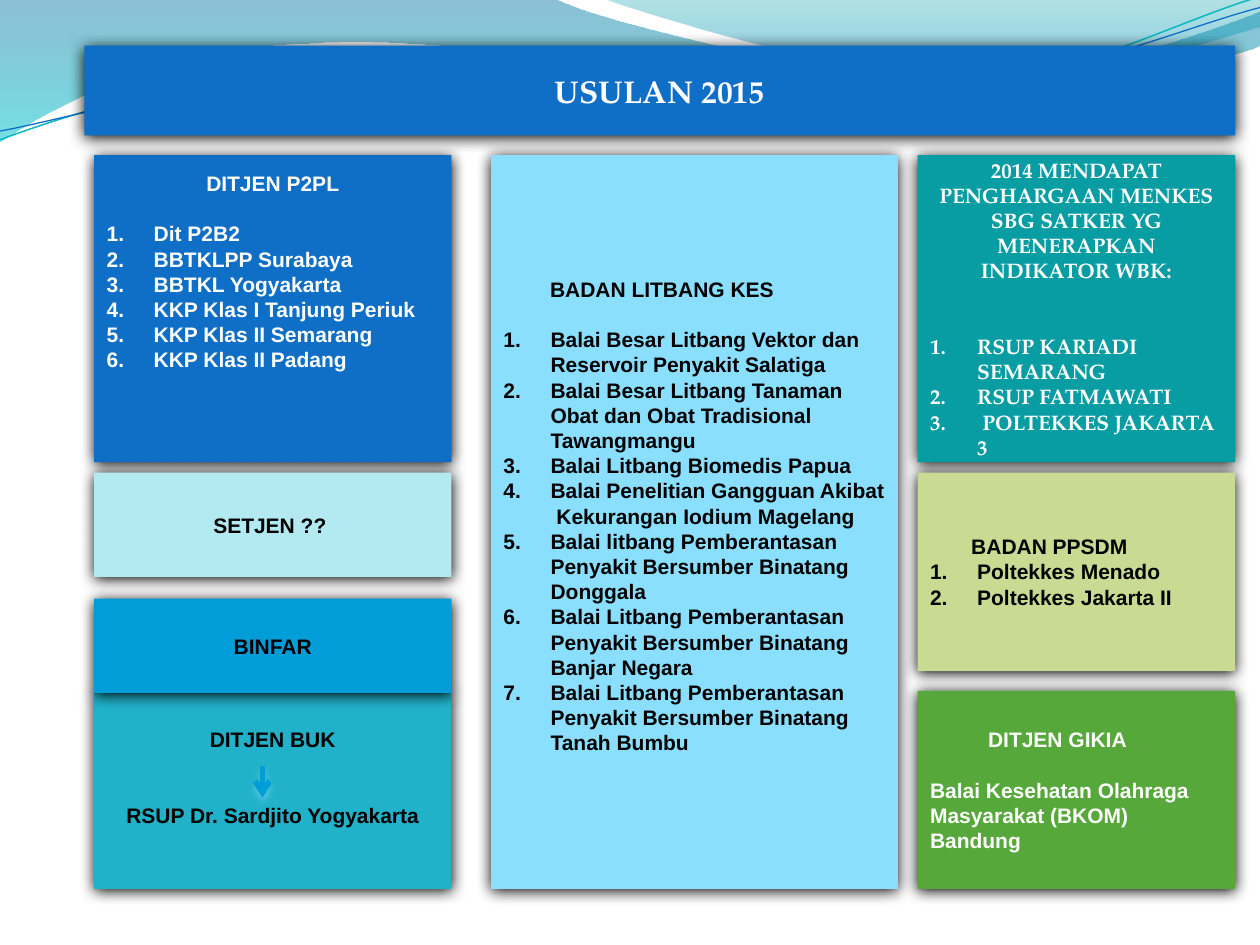
from itertools import chain

from pptx import Presentation
from pptx.dml.color import RGBColor
from pptx.enum.shapes import MSO_CONNECTOR as Connector, MSO_SHAPE as Shape
from pptx.enum.text import MSO_ANCHOR as Anchor, PP_ALIGN as Align
from pptx.oxml import parse_xml
from pptx.oxml.ns import nsdecls, qn
from pptx.util import Cm, Pt

WHITE = RGBColor(0xFF, 0xFF, 0xFF)
BLACK = RGBColor(0x00, 0x00, 0x00)
BLUE = RGBColor(0x0F, 0x6F, 0xC6)
SKY = RGBColor(0x8A, 0xDF, 0xFF)
TEAL = RGBColor(0x08, 0x9C, 0xA3)
GREEN = RGBColor(0x55, 0xA8, 0x39)
LIME = RGBColor(0xC9, 0xDA, 0x92)
TURQUOISE = RGBColor(0x21, 0xB2, 0xC9)
PALE = RGBColor(0xB3, 0xEA, 0xF2)
CYAN = RGBColor(0x00, 0x9D, 0xD9)
AQUA = RGBColor(0x0A, 0xB8, 0xBF)
WAVE_BLUE = RGBColor(0x00, 0x74, 0xA1)
WAVE_CYAN = RGBColor(0x00, 0xC6, 0xCF)
WAVE_TEAL = RGBColor(0x00, 0xA1, 0xA9)
WAVE_DEEP = RGBColor(0x00, 0x8B, 0xBF)

SERIF, SANS = "TeX Gyre Pagella", "Arial"
INCH = 2.54
HANGING = Cm(0.95)
LINE = 14.4  # line pitch of the body text, in points


class SlideBuilder:
    def __init__(self, slide):
        self.slide = slide

    def shadow(self, element, color=BLACK, opacity=100, blur=8.5, distance=1):
        properties = element.spPr
        for old in properties.findall(qn("a:effectLst")):
            properties.remove(old)
        properties.append(parse_xml(
            f'<a:effectLst {nsdecls("a")}><a:outerShdw blurRad="{Pt(blur)}" dist="{Pt(distance)}" '
            f'dir="5400000" rotWithShape="0"><a:srgbClr val="{color}">'
            f'<a:alpha val="{opacity * 1000}"/></a:srgbClr></a:outerShdw></a:effectLst>'))

    def outline(self, start, segments, close):
        """Freeform of segments: one point is a line, three points are a Bezier curve."""
        (x, y), *rest = [(Cm(x * INCH), Cm(y * INCH)) for x, y in chain([start], *segments)]
        builder = self.slide.shapes.build_freeform(x, y)
        builder.add_line_segments(rest, close=close)
        shape = builder.convert_to_shape()
        shape.shadow.inherit = False
        lines = iter(list(shape._element.iter(qn("a:lnTo"))))
        for segment in segments:
            first, *others = [next(lines) for _ in segment]
            if others:
                bezier = parse_xml(f'<a:cubicBezTo {nsdecls("a")}/>')
                first.addprevious(bezier)
                for line in (first, *others):
                    bezier.append(line[0])
                    line.getparent().remove(line)
        return shape

    def wave(self, start, segments, stops):
        shape = self.outline(start, segments, True)
        shape.line.fill.background()
        shape.fill.gradient()
        shape.fill.gradient_angle = 270
        for stop, (position, color, _) in zip(shape.fill.gradient_stops, stops):
            stop.position = position
            stop.color.rgb = color
        for element, (_, _, opacity) in zip(shape._element.spPr.iter(qn("a:srgbClr")), stops):
            element.append(parse_xml(f'<a:alpha {nsdecls("a")} val="{opacity * 1000}"/>'))

    def thread(self, start, segments, color, width):
        shape = self.outline(start, segments, False)
        shape.fill.background()
        shape.line.color.rgb = color
        shape.line.width = Pt(width)

    def paragraph(self, paragraph, text, color, font=SANS, size=12, align=Align.LEFT,
                  left=0, after=0, pitch=LINE, numbered=False):
        formats = {"alignment": align, "space_after": Pt(after)}
        if pitch:
            formats["line_spacing"] = Pt(pitch)
        for name, value in formats.items():
            setattr(paragraph, name, value)
        run = paragraph.add_run()
        run.text = text
        for name, value in {"name": font, "size": Pt(size), "bold": True}.items():
            setattr(run.font, name, value)
        run.font.color.rgb = color
        properties = paragraph._p.get_or_add_pPr()
        properties.set("marL", str(HANGING if numbered else Cm(left)))
        if numbered:
            properties.set("indent", str(-HANGING))
            properties.append(parse_xml(f'<a:buFont {nsdecls("a")} typeface="{font}"/>'))
            properties.append(parse_xml(f'<a:buAutoNum {nsdecls("a")} type="arabicPeriod"/>'))

    def panel(self, box, fill, color, heading, items=(), top=None, gap=0, left=None,
              numbered=True, item_align=Align.LEFT, **style):
        """Shadowed box; text sits in the middle unless a top inset is given."""
        shape = self.slide.shapes.add_shape(Shape.RECTANGLE, *(Cm(value) for value in box))
        shape.fill.solid()
        shape.fill.fore_color.rgb = fill
        shape.line.fill.background()
        self.shadow(shape._element)
        frame = shape.text_frame
        formats = {"word_wrap": True, "vertical_anchor": Anchor.MIDDLE}
        if top is not None:
            formats.update(vertical_anchor=Anchor.TOP, margin_top=Cm(top), margin_bottom=0)
        for name, value in formats.items():
            setattr(frame, name, value)
        self.paragraph(frame.paragraphs[0], heading, color, after=gap, left=left or 0,
                       align=Align.CENTER if left is None else Align.LEFT, **style)
        for item in items:
            self.paragraph(frame.add_paragraph(), item, color, numbered=numbered,
                           align=item_align, **style)

    def arrow(self, x, top, bottom, color, width):
        connector = self.slide.shapes.add_connector(Connector.STRAIGHT, Cm(x), Cm(top), Cm(x), Cm(bottom))
        connector.line.color.rgb = color
        connector.line.width = Pt(width)
        connector.line._get_or_add_ln().append(parse_xml(f'<a:tailEnd {nsdecls("a")} type="arrow"/>'))
        self.shadow(connector._element, SKY, 48, 4.5, 3)


def main():
    presentation = Presentation()
    presentation.slide_width, presentation.slide_height = Cm(25.4), Cm(19.05)
    builder = SlideBuilder(presentation.slides.add_slide(presentation.slide_layouts[6]))

    # Waves along the top edge (points in inches)
    builder.wave((0, 0), [
        [(4.4, -0.01)],
        [(4.76, 0.17), (6.64, 0.63), (7.58, 0.63)], [(8.53, 0.63), (9.58, 0.26), (10, 0.09)],
        [(10.01, 0.36)],
        [(9.83, 0.44), (8.7, 0.76), (7.46, 0.75)], [(6.22, 0.75), (3.82, 0.28), (2.57, 0.34)],
        [(1.29, 0.36), (0.46, 0.83), (-0.01, 1.13)],
        [(0, 0)]], [(0, WAVE_BLUE, 45), (1, WAVE_CYAN, 55)])
    builder.wave((4.79, -0.01), [
        [(5.09, 0.11), (6.82, 0.62), (7.69, 0.65)], [(8.56, 0.69), (9.61, 0.32), (10, 0.21)],
        [(10, 0)], [(4.79, -0.01)]], [(0, WAVE_TEAL, 30), (0.8, WAVE_DEEP, 45)])
    builder.thread((0, 1.11), [
        [(0.48, 0.93), (1.58, 0.57), (2.77, 0.52)], [(3.95, 0.47), (5.93, 0.89), (7.13, 0.8)],
        [(8.33, 0.71), (9.38, 0.15), (9.98, -0.02)]], AQUA, 0.85)
    builder.thread((0, 1.04), [
        [(0.47, 0.96), (1.64, 0.61), (2.83, 0.56)], [(4.03, 0.51), (5.97, 0.84), (7.17, 0.75)],
        [(8.36, 0.67), (9.41, 0.21), (10, 0.06)]], BLUE, 0.75)

    # Column and row grid (centimetres)
    left, middle, right = (1.9, 7.2), (9.9, 8.2), (18.5, 6.4)
    upper, centre, lower = (3.13, 6.19), (9.53, 4), (13.93, 3.99)

    def cell(column, row):
        return column[0], row[0], column[1], row[1]

    # Title
    builder.panel((1.7, 0.92, 23.2, 1.81), BLUE, WHITE, "USULAN 2015", font=SERIF, size=18, pitch=None)

    # Upper panels
    builder.panel(cell(left, upper), BLUE, WHITE, "DITJEN P2PL", [
        "Dit P2B2", "BBTKLPP Surabaya", "BBTKL Yogyakarta", "KKP Klas I Tanjung Periuk",
        "KKP Klas II Semarang", "KKP Klas II Padang"], top=0.31, gap=LINE)
    builder.panel(cell(middle, (3.13, 14.79)), SKY, BLACK, "BADAN LITBANG KES", [
        "Balai Besar Litbang Vektor dan Reservoir Penyakit Salatiga",
        "Balai Besar Litbang Tanaman Obat dan Obat Tradisional Tawangmangu",
        "Balai Litbang Biomedis Papua",
        "Balai Penelitian Gangguan Akibat  Kekurangan Iodium Magelang",
        "Balai litbang Pemberantasan Penyakit Bersumber Binatang Donggala",
        "Balai Litbang Pemberantasan Penyakit Bersumber Binatang Banjar Negara",
        "Balai Litbang Pemberantasan Penyakit Bersumber Binatang Tanah Bumbu"],
        top=2.44, gap=LINE, left=0.94)
    builder.panel(cell(right, upper), TEAL, WHITE,
                  "2014 MENDAPAT PENGHARGAAN MENKES SBG SATKER YG MENERAPKAN INDIKATOR WBK:",
                  ["RSUP KARIADI SEMARANG", "RSUP FATMAWATI", " POLTEKKES JAKARTA 3"],
                  top=0.04, gap=2 * LINE, font=SERIF)

    # Lower panels
    builder.panel(cell(right, lower), GREEN, WHITE, "DITJEN GIKIA",
                  ["Balai Kesehatan Olahraga Masyarakat (BKOM) Bandung"],
                  top=0.72, gap=LINE, left=1.17, numbered=False)
    builder.panel(cell(right, centre), LIME, BLACK, "BADAN PPSDM",
                  ["Poltekkes Menado", "Poltekkes Jakarta II"], top=1.23, left=0.83)
    builder.panel(cell(left, lower), TURQUOISE, BLACK, "DITJEN BUK", ["RSUP Dr. Sardjito Yogyakarta"],
                  top=0.72, gap=2 * LINE, numbered=False, item_align=Align.CENTER)
    builder.panel(cell(left, (9.53, 2.1)), PALE, BLACK, "SETJEN ?? ")
    builder.panel(cell(left, (12.07, 1.9)), CYAN, BLACK, "BINFAR")

    # Arrow from the directorate to its hospital
    builder.arrow(5.29, 15.44, 16.08, CYAN, 3)

    presentation.save("out.pptx")


if __name__ == "__main__":
    main()
